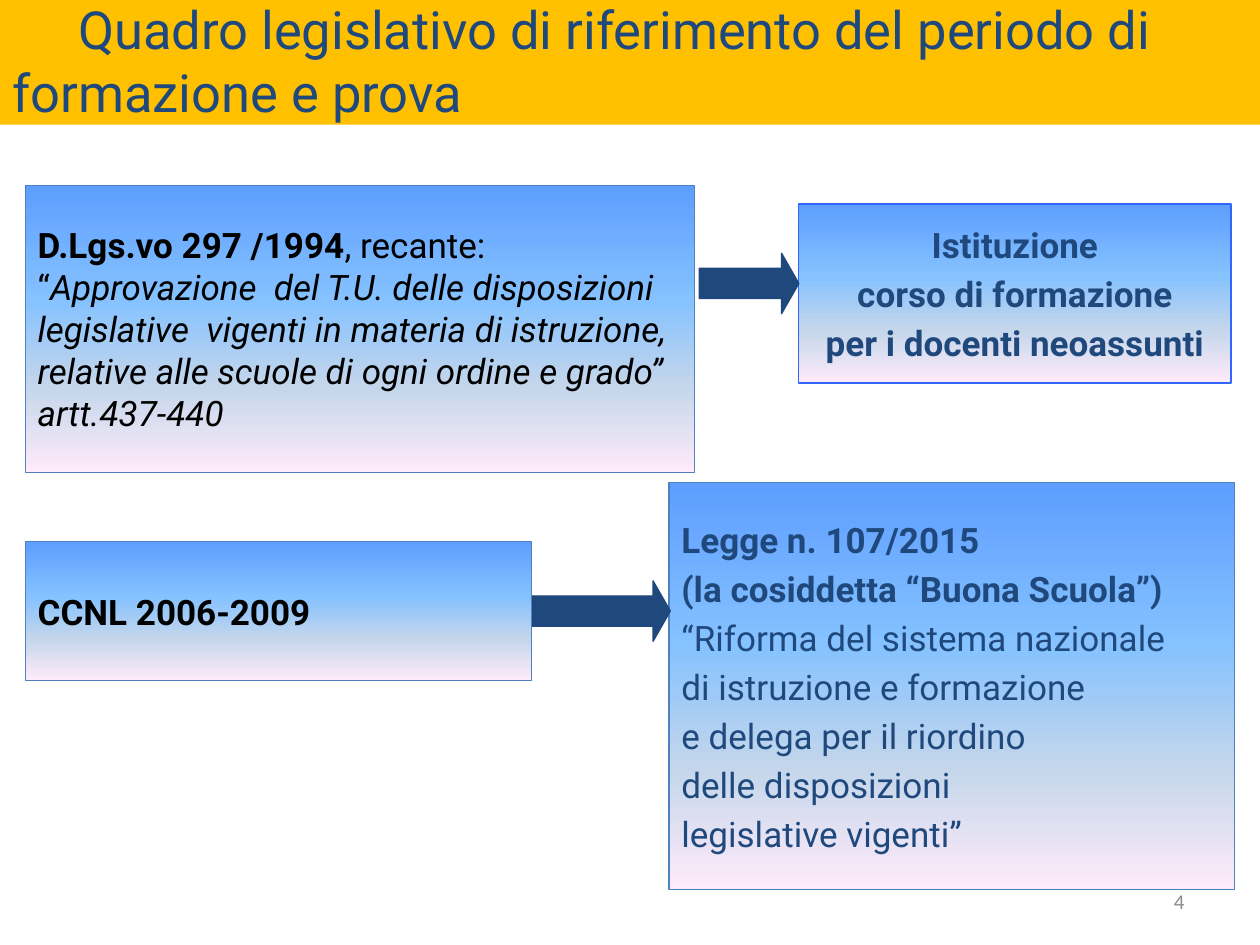
from lxml.etree import SubElement
from pptx import Presentation
from pptx.dml.color import RGBColor
from pptx.enum.shapes import MSO_SHAPE
from pptx.enum.text import MSO_ANCHOR, MSO_AUTO_SIZE, PP_ALIGN
from pptx.oxml.ns import qn
from pptx.util import Inches, Pt

NAVY = RGBColor(0x1F, 0x49, 0x7D)
AMBER = RGBColor(0xFF, 0xC0, 0x00)
BLACK = RGBColor(0x00, 0x00, 0x00)
GREY = RGBColor(0x8C, 0x8C, 0x8C)
STEEL = RGBColor(0x4F, 0x81, 0xBD)
ROYAL = RGBColor(0x33, 0x66, 0xFF)
STOPS = [
    (0, RGBColor(0x5E, 0x9E, 0xFF)),
    (40, RGBColor(0x85, 0xC2, 0xFF)),
    (70, RGBColor(0xC4, 0xD6, 0xEB)),
    (100, RGBColor(0xFF, 0xEB, 0xFA)),
]
COLS, ROWS = 100, 75
CELL = Inches(10) // COLS


def grid(*box):
    """Turn columns and rows into slide lengths."""
    return [round(n * CELL) for n in box]


def write(shape, lines, size=20, color=NAVY, font="Roboto",
          align=PP_ALIGN.LEFT, gap=0, wrap=False):
    """Fill a shape; each line is a list of (text, style), style from "bi"."""
    frame = shape.text_frame
    frame.auto_size = MSO_AUTO_SIZE.NONE
    frame.word_wrap = wrap
    frame.vertical_anchor = MSO_ANCHOR.MIDDLE
    for i, line in enumerate(lines):
        para = frame.add_paragraph() if i else frame.paragraphs[0]
        para.alignment = align
        para.space_before = Pt(gap)
        for text, style in line:
            run = para.add_run()
            run.text = text
            run.font.name = font
            run.font.size = Pt(size)
            run.font.color.rgb = color
            run.font.bold = "b" in style
            run.font.italic = "i" in style


def shade(shape):
    """Four-stop gradient from top to bottom."""
    shape.fill.gradient()
    grad = shape.element.spPr.find(qn("a:gradFill"))
    for part in list(grad):
        grad.remove(part)
    stops = SubElement(grad, qn("a:gsLst"))
    for share, color in STOPS:
        stop = SubElement(stops, qn("a:gs"), pos=str(share * 1000))
        SubElement(stop, qn("a:srgbClr"), val=str(color))
    SubElement(grad, qn("a:lin"), ang="5400000", scaled="0")


def head(slide, box, text):
    """Title band with an indented first line."""
    title = slide.shapes.title
    title.left, title.top, title.width, title.height = grid(*box)
    title.fill.solid()
    title.fill.fore_color.rgb = AMBER
    write(title, [[(text, "")]], size=30, wrap=True)
    props = title.text_frame.paragraphs[0]._p.get_or_add_pPr()
    props.set("indent", str(grid(5.2)[0]))


def panel(slide, box, lines, edge=STEEL, **form):
    """Shaded box with text."""
    shape = slide.shapes.add_shape(MSO_SHAPE.RECTANGLE, *grid(*box))
    shape.shadow.inherit = False
    shade(shape)
    shape.line.color.rgb = edge
    shape.line.width = Pt(0.75)
    write(shape, lines, **form)


def arrow(slide, box):
    """Solid arrow that points right."""
    shape = slide.shapes.add_shape(MSO_SHAPE.RIGHT_ARROW, *grid(*box))
    shape.shadow.inherit = False
    shape.adjustments[0], shape.adjustments[1] = 0.5, 0.285
    shape.fill.solid()
    shape.fill.fore_color.rgb = NAVY
    shape.line.color.rgb = NAVY
    shape.line.width = Pt(0.75)


def main():
    deck = Presentation()
    deck.slide_width, deck.slide_height = grid(COLS, ROWS)
    slide = deck.slides.add_slide(deck.slide_layouts[5])

    # Page number
    page = slide.shapes.add_textbox(*grid(71.7, 69.5, 23.3, 4))
    write(page, [[("4", "")]], size=12, color=GREY, font="Calibri",
          align=PP_ALIGN.RIGHT, wrap=True)

    # Title
    head(slide, (0, -0.3, COLS, 10.2),
         "Quadro legislativo di riferimento del periodo di formazione e prova")

    # Decree and the course it sets up
    panel(slide, (2, 14.7, 53.1, 22.8), [
        [("D.Lgs.vo 297 /1994", "b"), (", recante:", "")],
        [("“", ""), ("Approvazione  del T.U. delle disposizioni", "i")],
        [("legislative  vigenti in materia di istruzione,", "i")],
        [("relative alle scuole di ogni ordine e grado”", "i")],
        [("artt.437-440", "i")],
    ], color=BLACK)
    panel(slide, (63.4, 16.2, 34.3, 14.2), [
        [("Istituzione", "b")],
        [("corso di formazione", "b")],
        [("per i docenti neoassunti", "b")],
    ], edge=ROYAL, align=PP_ALIGN.CENTER, gap=4)
    arrow(slide, (55.5, 20.1, 7.9, 4.8))

    # Contract and the reform law
    panel(slide, (53.1, 38.3, 44.9, 32.3), [
        [("Legge n. 107/2015", "b")],
        [("(la cosiddetta “Buona Scuola”)", "b")],
        [("“Riforma del sistema nazionale", "")],
        [("di istruzione e formazione", "")],
        [("e delega per il riordino", "")],
        [("delle disposizioni", "")],
        [("legislative vigenti”", "")],
    ], gap=4)
    arrow(slide, (41.4, 46.1, 11.8, 4.8))
    panel(slide, (2, 43, 40.2, 11), [[("CCNL 2006-2009", "b")]], color=BLACK)

    deck.save("out.pptx")


if __name__ == "__main__":
    main()
